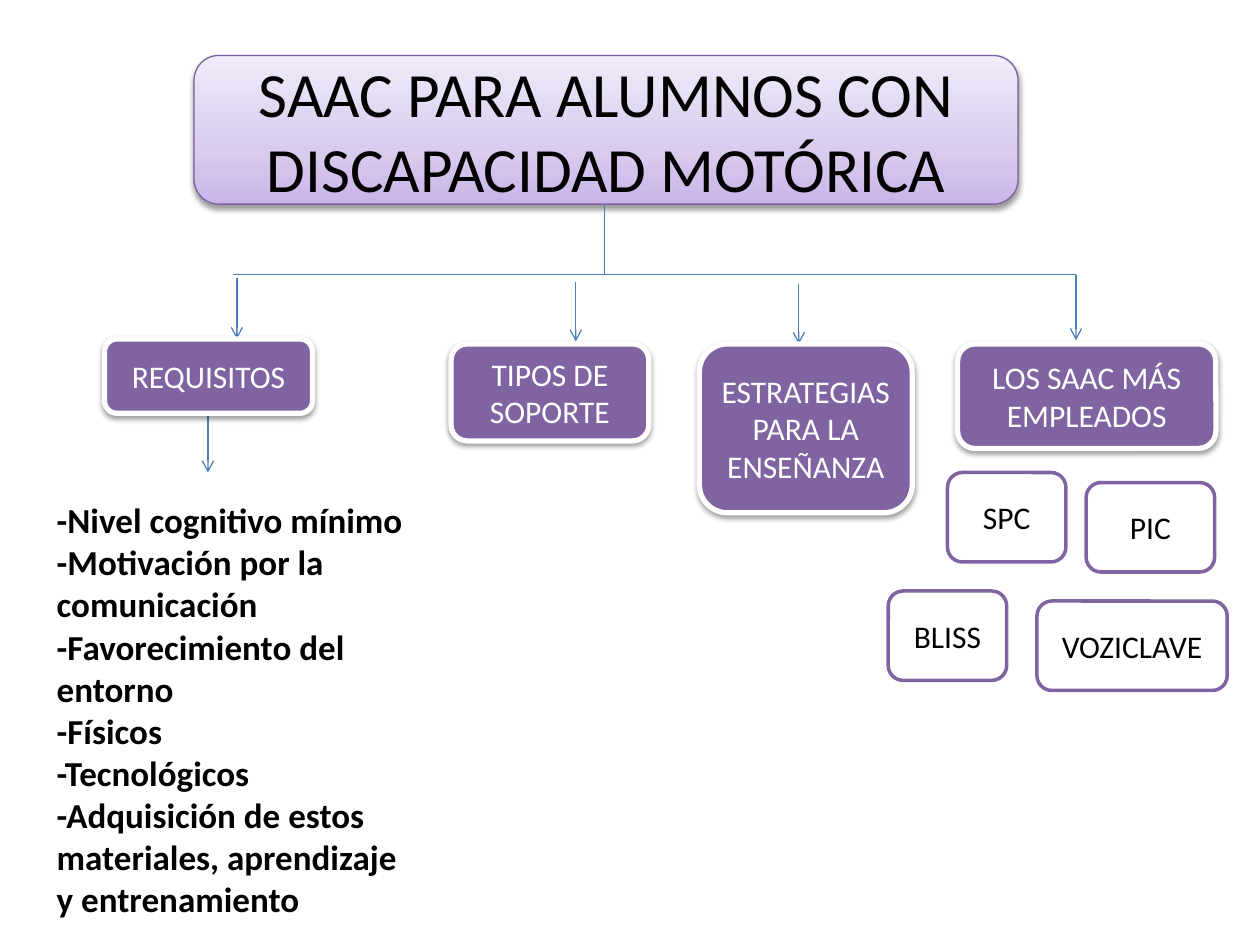
from lxml import etree
from pptx import Presentation
from pptx.dml.color import RGBColor
from pptx.enum.shapes import MSO_CONNECTOR, MSO_SHAPE
from pptx.enum.text import MSO_ANCHOR, MSO_AUTO_SIZE, PP_ALIGN
from pptx.oxml import parse_xml
from pptx.oxml.ns import nsdecls, qn
from pptx.util import Inches, Pt

ROUNDED = MSO_SHAPE.ROUNDED_RECTANGLE
STRAIGHT = MSO_CONNECTOR.STRAIGHT
CENTER, LEFT = PP_ALIGN.CENTER, PP_ALIGN.LEFT
MIDDLE, TOP = MSO_ANCHOR.MIDDLE, MSO_ANCHOR.TOP
NO_AUTOFIT = MSO_AUTO_SIZE.NONE

FONT = "Calibri"
PURPLE, BORDER, BLUE = "8064A2", "7D60A0", "4B7EBC"
WHITE, BLACK = "FFFFFF", "000000"

# Content: text and left, top, width, height
TITLE = "SAAC PARA ALUMNOS CON DISCAPACIDAD MOTÓRICA"
TITLE_BOX = (1.54, 0.44, 6.54, 1.18)
TITLE_GRADIENT = [(0, "C9B5E8"), (35, "D8CBEE"), (100, "F0EAF9")]
BRANCHES = [
    ("REQUISITOS", (0.83, 2.69, 1.65, 0.59)),
    ("TIPOS DE SOPORTE", (3.58, 2.73, 1.57, 0.77)),
    ("ESTRATEGIAS PARA LA ENSEÑANZA", (5.55, 2.73, 1.69, 1.34)),
    ("LOS SAAC MÁS EMPLEADOS", (7.6, 2.73, 2.05, 0.83)),
]
SYSTEMS = [
    ("SPC", (7.52, 3.75, 0.94, 0.71)),
    ("PIC", (8.62, 3.83, 1.02, 0.71)),
    ("BLISS", (7.05, 4.69, 0.94, 0.71)),
    ("VOZICLAVE", (8.23, 4.77, 1.51, 0.71)),
]
REQUIREMENTS = [
    "-Nivel cognitivo mínimo",
    "-Motivación por la comunicación",
    "-Favorecimiento del entorno",
    "-Físicos",
    "-Tecnológicos",
    "-Adquisición de estos materiales, aprendizaje y entrenamiento",
]
REQUIREMENTS_BOX = (0.35, 3.91, 3.07, 3.47)

# Connectors: x and y of both ends
BAR_Y = 2.18
PLAIN_LINES = [(4.8, 1.62, 4.8, BAR_Y), (1.85, BAR_Y, 8.54, BAR_Y)]
# Arrows point down: x, top, bottom
ARROWS = [(1.88, 2.21, 2.69), (4.57, 2.24, 2.71), (6.34, 2.25, 2.73),
          (8.54, BAR_Y, 2.7), (1.65, 3.28, 3.75)]


def color(value):
    return RGBColor.from_string(value)


def place(shape, box):
    shape.left, shape.top, shape.width, shape.height = map(Inches, box)


def set_line(shape, value, width):
    shape.line.color.rgb = color(value)
    shape.line.width = Pt(width)


def write(shape, texts, size, value, align=CENTER, anchor=MIDDLE, bold=False):
    frame = shape.text_frame
    frame.word_wrap = True
    frame.auto_size = NO_AUTOFIT
    frame.vertical_anchor = anchor
    for index, text in enumerate(texts):
        paragraph = frame.add_paragraph() if index else frame.paragraphs[0]
        paragraph.alignment = align
        paragraph.space_before = Pt(0)
        run = paragraph.add_run()
        run.text = text
        run.font.name, run.font.size, run.font.bold = FONT, Pt(size), bold
        run.font.color.rgb = color(value)


def add_shadow(shape):
    effects = shape._element.spPr.find(qn("a:effectLst"))
    effects.append(parse_xml(
        f'<a:outerShdw {nsdecls("a")} blurRad="40000" dist="20000" dir="5400000" rotWithShape="0">'
        f'<a:srgbClr val="{BLACK}"><a:alpha val="38000"/></a:srgbClr></a:outerShdw>'))


def add_box(slide, box, fill, line, width):
    shape = slide.shapes.add_shape(ROUNDED, *map(Inches, box))
    shape.shadow.inherit = False
    shape.fill.solid()
    shape.fill.fore_color.rgb = color(fill)
    set_line(shape, line, width)
    return shape


def add_line(slide, ends, arrow=False):
    connector = slide.shapes.add_connector(STRAIGHT, *map(Inches, ends))
    set_line(connector, BLUE, 0.75)
    if arrow:
        etree.SubElement(connector.line._get_or_add_ln(), qn("a:tailEnd"), type="arrow")
    etree.SubElement(connector._element.spPr, qn("a:effectLst"))


def add_title(slide):
    # Rounded panel behind the title placeholder
    panel = add_box(slide, TITLE_BOX, WHITE, BORDER, 0.75)
    stops = "".join(f'<a:gs pos="{position * 1000}"><a:srgbClr val="{value}"/></a:gs>'
                    for position, value in TITLE_GRADIENT)
    properties = panel._element.spPr
    properties.replace(properties.find(qn("a:solidFill")), parse_xml(
        f'<a:gradFill {nsdecls("a")} rotWithShape="1"><a:gsLst>{stops}</a:gsLst>'
        '<a:lin ang="16200000" scaled="0"/></a:gradFill>'))
    add_shadow(panel)
    title = slide.shapes.title
    title._element.addprevious(panel._element)
    place(title, TITLE_BOX)
    write(title, [TITLE], 36, BLACK)


def format_requirements(body):
    place(body, REQUIREMENTS_BOX)
    write(body, REQUIREMENTS, 20, BLACK, LEFT, TOP, bold=True)
    for paragraph in body.text_frame.paragraphs:
        properties = paragraph._p.get_or_add_pPr()
        properties.set("marL", "0")
        properties.set("indent", "0")
        etree.SubElement(properties, qn("a:buNone"))


def main():
    presentation = Presentation()
    presentation.slide_width, presentation.slide_height = Inches(10), Inches(7.5)
    slide = presentation.slides.add_slide(presentation.slide_layouts[1])

    # Title and list of requirements
    add_title(slide)
    format_requirements(slide.placeholders[1])

    # Tree lines
    for ends in PLAIN_LINES:
        add_line(slide, ends)
    for x, top, bottom in ARROWS:
        add_line(slide, (x, top, x, bottom), arrow=True)

    # Branches and systems
    for text, box in BRANCHES:
        branch = add_box(slide, box, PURPLE, WHITE, 3)
        add_shadow(branch)
        write(branch, [text], 18, WHITE)
    for text, box in SYSTEMS:
        write(add_box(slide, box, WHITE, PURPLE, 2), [text], 18, BLACK)

    presentation.save("out.pptx")


if __name__ == "__main__":
    main()
